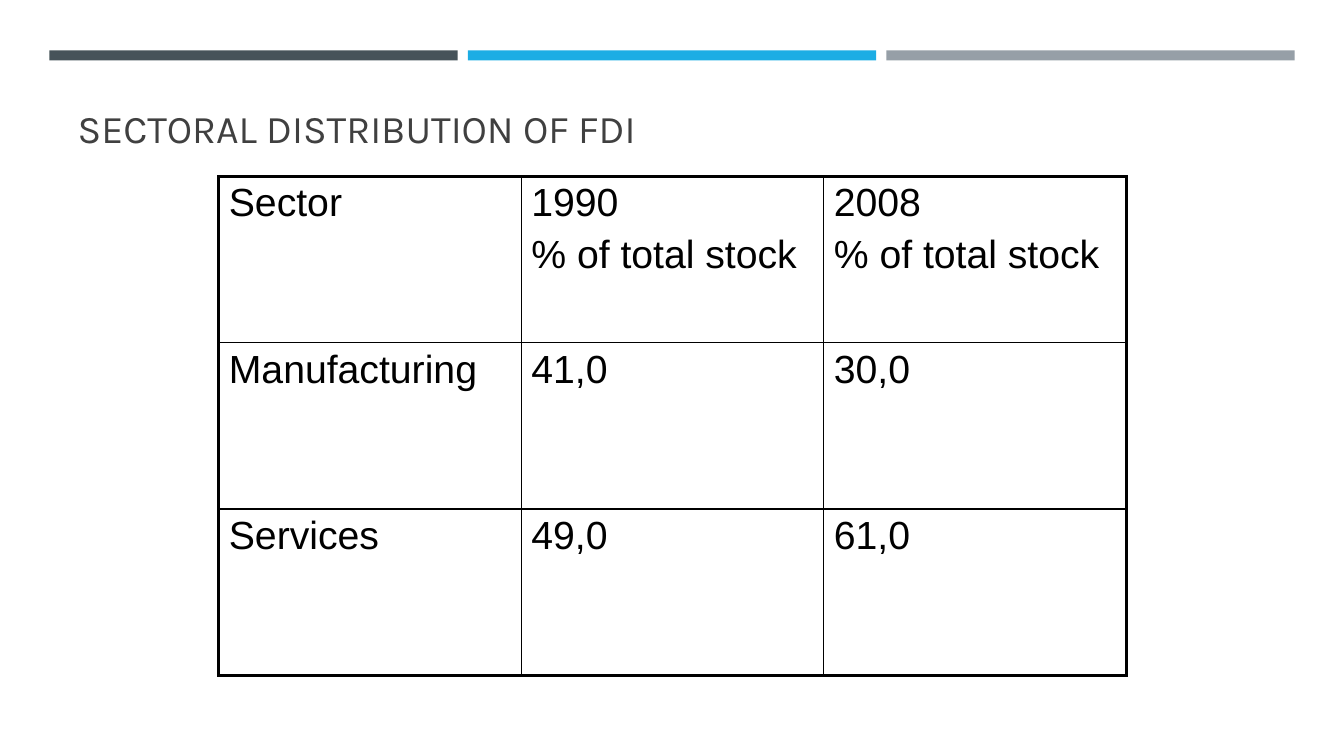
from lxml.etree import SubElement as Sub
from pptx import Presentation
from pptx.dml.color import RGBColor
from pptx.enum.shapes import MSO_SHAPE as Shape
from pptx.enum.text import MSO_ANCHOR as Anchor, MSO_AUTO_SIZE as Fit, PP_ALIGN as Align
from pptx.oxml.ns import qn
from pptx.util import Inches, Pt

SLATE = RGBColor(0x46, 0x53, 0x59)
BLUE = RGBColor(0x1C, 0xAD, 0xE4)
GREY = RGBColor(0x96, 0x9F, 0xA7)
DARK = RGBColor(0x40, 0x40, 0x40)
BLACK = RGBColor(0, 0, 0)

ROWS = [
    ["Sector", "1990\n% of total stock", "2008\n% of total stock"],
    ["Manufacturing", "41,0", "30,0"],
    ["Services", "49,0", "61,0"],
]
THICK, THIN = 2.25, 1


def write(frame, text, font="Arial", size=28, color=BLACK, before=0):
    frame.text = text
    for para in frame.paragraphs:
        para.alignment = Align.LEFT
        para.space_before = Pt(before)
        para.font.name = font
        para.font.size = Pt(size)
        para.font.color.rgb = color


def draw_bars(slide, left, top, width, height, gap=0.1):
    colors = [SLATE, BLUE, GREY]
    step = (width + gap) / len(colors)
    for i, color in enumerate(colors):
        bar = slide.shapes.add_shape(
            Shape.RECTANGLE, Inches(left + i * step), Inches(top),
            Inches(step - gap), Inches(height))
        bar.shadow.inherit = False
        bar.fill.solid()
        bar.fill.fore_color.rgb = color
        bar.line.fill.background()


def draw_title(slide, text, left, top, width, height):
    title = slide.shapes.title
    title.left, title.top = Inches(left), Inches(top)
    title.width, title.height = Inches(width), Inches(height)
    frame = title.text_frame
    frame.word_wrap = True
    frame.auto_size = Fit.NONE
    frame.vertical_anchor = Anchor.BOTTOM
    write(frame, text, font="Karla", color=DARK)


def set_edge(cell, tag, width):
    line = Sub(cell._tc.get_or_add_tcPr(), qn("a:" + tag), w=str(Pt(width)))
    fill = Sub(line, qn("a:solidFill"))
    Sub(fill, qn("a:srgbClr"), val=str(BLACK))


def draw_table(slide, rows, left, top, width, height):
    last_row, last_col = len(rows) - 1, len(rows[0]) - 1
    table = slide.shapes.add_table(
        len(rows), len(rows[0]), Inches(left), Inches(top),
        Inches(width), Inches(height)).table
    table.first_row = table.horz_banding = False
    for r, row in enumerate(rows):
        for c, text in enumerate(row):
            cell = table.cell(r, c)
            write(cell.text_frame, text, before=5.6)
            # Thick outer frame, thin inner grid
            edges = {"lnL": c == 0, "lnR": c == last_col,
                     "lnT": r == 0, "lnB": r == last_row}
            for tag, outer in edges.items():
                set_edge(cell, tag, THICK if outer else THIN)
            cell.fill.background()


def main():
    deck = Presentation()
    deck.slide_width, deck.slide_height = Inches(13.33), Inches(7.5)
    slide = deck.slides.add_slide(deck.slide_layouts[5])
    # Top band
    draw_bars(slide, 0.49, 0.5, 12.35, 0.1)
    # Heading
    draw_title(slide, "SECTORAL DISTRIBUTION OF FDI", 0.67, 0.3, 12, 1.25)
    # Sector shares
    draw_table(slide, ROWS, 2.17, 1.75, 9, 4.95)
    deck.save("out.pptx")


if __name__ == "__main__":
    main()
